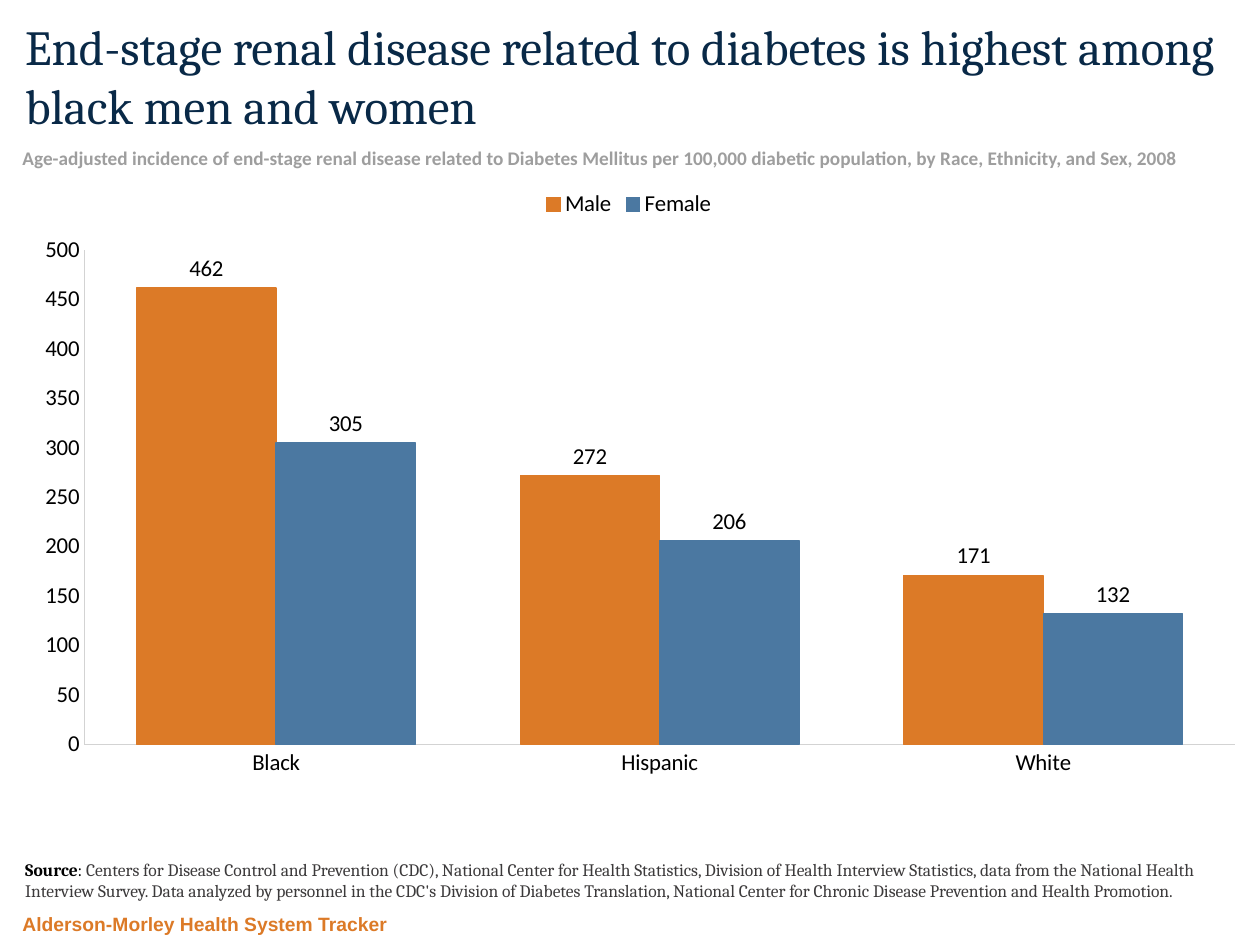
"""Build a slide on renal disease by race and sex, with a column chart."""
from dataclasses import dataclass

from lxml import etree
from pptx import Presentation
from pptx.chart.data import CategoryChartData
from pptx.dml.color import RGBColor
from pptx.enum.chart import XL_CHART_TYPE, XL_LABEL_POSITION, XL_LEGEND_POSITION, XL_TICK_MARK
from pptx.enum.text import MSO_ANCHOR, MSO_AUTO_SIZE, PP_ALIGN
from pptx.oxml.ns import qn
from pptx.util import Emu, Pt

PX = 9144
COLUMN = XL_CHART_TYPE.COLUMN_CLUSTERED
OUTSIDE = XL_LABEL_POSITION.OUTSIDE_END
TOP_KEY = XL_LEGEND_POSITION.TOP
NO_TICK = XL_TICK_MARK.NONE
MIDDLE, BOTTOM, TOP = MSO_ANCHOR.MIDDLE, MSO_ANCHOR.BOTTOM, MSO_ANCHOR.TOP
NO_FIT = MSO_AUTO_SIZE.NONE
LEFT = PP_ALIGN.LEFT

BLACK = RGBColor(0x00, 0x00, 0x00)
INK = RGBColor(0x3C, 0x3A, 0x3B)
NAVY = RGBColor(0x09, 0x29, 0x47)
GREY = RGBColor(0x9E, 0x9E, 0x9E)
PALE = RGBColor(0xD3, 0xD3, 0xD3)
ORANGE = RGBColor(0xDC, 0x7A, 0x27)
BLUE = RGBColor(0x4B, 0x78, 0xA1)


@dataclass
class Box:
    """A place on the slide, in px."""
    left: int
    top: int
    width: int
    height: int

    def emu(self) -> list[Emu]:
        """Return the four lengths in EMU."""
        return [Emu(n * PX) for n in (self.left, self.top, self.width, self.height)]


@dataclass
class Run:
    """A stretch of text in one style."""
    text: str
    font: str
    size: int
    color: RGBColor
    bold: bool = False


@dataclass
class Group:
    """A chart series and its colour."""
    name: str
    values: tuple[int, ...]
    color: RGBColor


RACES = ("Black", "Hispanic", "White")
GROUPS = (
    Group("Male", (462, 272, 171), ORANGE),
    Group("Female", (305, 206, 132), BLUE),
)
PLOT = {"x": 0.06, "y": 0.12, "w": 0.93, "h": 0.8}
TITLE = [Run("End-stage renal disease related to diabetes is highest among black men and women",
             "Cambria", 28, NAVY)]
NOTE = [Run("Age-adjusted incidence of end-stage renal disease related to Diabetes Mellitus "
            "per 100,000 diabetic population, by Race, Ethnicity, and Sex, 2008",
            "Calibri", 11, GREY, True)]
SOURCE = [
    Run("Source", "Cambria", 10, BLACK, True),
    Run(": ", "Cambria", 10, BLACK),
    Run("Centers for Disease Control and Prevention (CDC), National Center for Health "
        "Statistics, Division of Health Interview Statistics, data from the National Health "
        "Interview Survey. Data analyzed by personnel in the CDC's Division of Diabetes "
        "Translation, National Center for Chronic Disease Prevention and Health Promotion.",
        "Cambria", 10, INK),
]
BRAND = [Run("Alderson-Morley Health System Tracker", "Arial", 11, ORANGE, True)]


def write(shape, box: Box, runs: list[Run], anchor: MSO_ANCHOR) -> None:
    """Place a text shape and fill it run by run."""
    shape.left, shape.top, shape.width, shape.height = box.emu()
    frame = shape.text_frame
    frame.word_wrap = True
    frame.auto_size = NO_FIT
    frame.vertical_anchor = anchor
    para = frame.paragraphs[0]
    para.alignment = LEFT
    para.space_before = Pt(0)
    props = para._p.get_or_add_pPr()
    props.set("marL", "0")
    props.set("indent", "0")
    etree.SubElement(props, qn("a:buNone"))
    for item in runs:
        run = para.add_run()
        run.text = item.text
        font = run.font
        font.name, font.size, font.bold = item.font, Pt(item.size), item.bold
        font.color.rgb = item.color


def place_plot(chart) -> None:
    """Fix the inner plot area as shares of the chart."""
    area = chart._chartSpace.find(".//" + qn("c:plotArea"))
    for old in area.findall(qn("c:layout")):
        area.remove(old)
    layout = etree.Element(qn("c:layout"))
    manual = etree.SubElement(layout, qn("c:manualLayout"))
    parts = {"layoutTarget": "inner", "xMode": "edge", "yMode": "edge", **PLOT}
    for tag, value in parts.items():
        etree.SubElement(manual, qn("c:" + tag)).set("val", str(value))
    area.insert(0, layout)


def style_axis(axis) -> None:
    """Give an axis a pale line without ticks or grid."""
    axis.has_major_gridlines = False
    axis.major_tick_mark = axis.minor_tick_mark = NO_TICK
    axis.format.line.color.rgb = PALE
    axis.format.line.width = Pt(0.75)


def draw_chart(slide, box: Box) -> None:
    """Add the column chart."""
    data = CategoryChartData(number_format="0")
    data.categories = RACES
    for group in GROUPS:
        data.add_series(group.name, group.values)
    chart = slide.shapes.add_chart(COLUMN, *box.emu(), data).chart
    chart.has_title = False
    chart.font.name, chart.font.size = "Calibri", Pt(13)
    chart.font.color.rgb = BLACK
    chart.has_legend = True
    chart.legend.position = TOP_KEY
    chart.legend.include_in_layout = False
    for axis in (chart.category_axis, chart.value_axis):
        style_axis(axis)
    scale = chart.value_axis
    scale.minimum_scale, scale.maximum_scale, scale.major_unit = 0, 500, 50
    plot = chart.plots[0]
    plot.gap_width, plot.overlap = 75, 0
    plot.vary_by_categories = False
    for group, series in zip(GROUPS, plot.series):
        look = series.format
        look.fill.solid()
        look.fill.fore_color.rgb = look.line.color.rgb = group.color
        look.line.width = Pt(0.75)
        labels = series.data_labels
        labels.show_value = True
        labels.number_format, labels.number_format_is_linked = "0", False
        labels.position = OUTSIDE
    place_plot(chart)


def main() -> None:
    """Build and save the deck."""
    deck = Presentation()
    deck.slide_width, deck.slide_height = Emu(1000 * PX), Emu(750 * PX)
    slide = deck.slides.add_slide(deck.slide_layouts[1])
    note, brand = Box(8, 111, 967, 29), Box(8, 717, 798, 30)
    write(slide.shapes.title, Box(10, 10, 980, 100), TITLE, MIDDLE)
    write(slide.shapes.add_textbox(*note.emu()), note, NOTE, TOP)
    draw_chart(slide, Box(8, 140, 982, 490))
    write(slide.placeholders[1], Box(10, 640, 982, 80), SOURCE, BOTTOM)
    write(slide.shapes.add_textbox(*brand.emu()), brand, BRAND, BOTTOM)
    deck.save("out.pptx")


if __name__ == "__main__":
    main()
